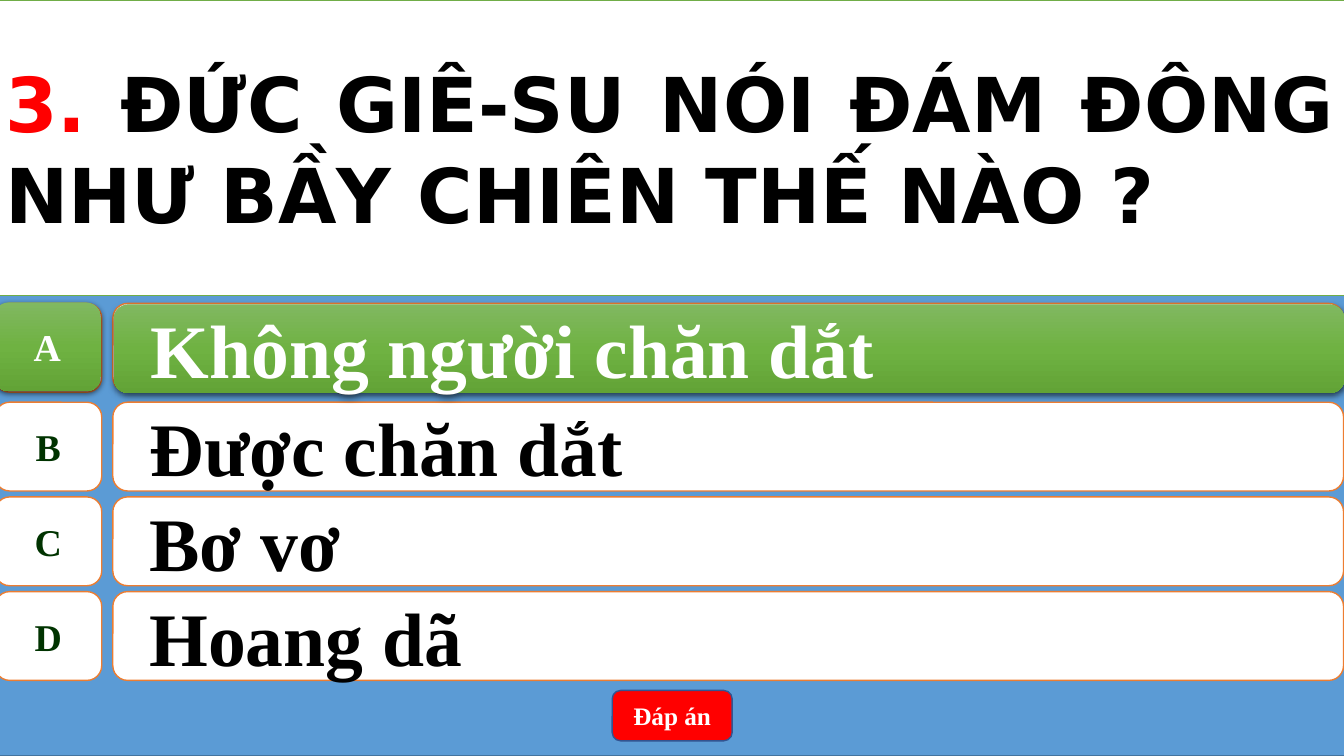
"""Build a Vietnamese quiz slide with four answers and the correct one highlighted."""
from pptx import Presentation
from pptx import util as u
from pptx.dml.color import RGBColor
from pptx.enum import shapes, text
from pptx.oxml import parse_xml
from pptx.oxml.ns import nsdecls, qn

SERIF = "Times New Roman"
ANSWERS = ["Không người chăn dắt", "Được chăn dắt", "Bơ vơ", "Hoang dã"]
ROW_TOPS = [216.7] + [287.3 + 67.65 * step for step in range(3)]
ROW_HEIGHT = 63.4
GREENS = {0: "81B861", 50: "6FB242", 100: "62A336"}
KIND = shapes.MSO_SHAPE


def paint(colour_format, value):
    """Set a colour from a hex string."""
    colour_format.rgb = RGBColor.from_string(value)


def place(shape, left, top, width, height):
    """Position a shape, in points."""
    box = {"left": left, "top": top, "width": width, "height": height}
    for side, points in box.items():
        setattr(shape, side, u.Pt(points))


def style(shape, fill, line):
    """Give a shape a flat fill and a thin outline."""
    shape.shadow.inherit = False
    shape.fill.solid()
    paint(shape.fill.fore_color, fill)
    shape.line.width = u.Pt(1)
    paint(shape.line.color, line)


def add_panel(parent, kind, box, fill, line):
    """Add a styled preset shape."""
    panel = parent.add_shape(kind, *[u.Pt(points) for points in box])
    style(panel, fill, line)
    return panel


def write(shape, runs, size, font=SERIF, align=text.PP_ALIGN.CENTER, wrap=True):
    """Write bold coloured runs in the middle of a shape."""
    frame = shape.text_frame
    frame_format = {"word_wrap": wrap, "auto_size": text.MSO_AUTO_SIZE.NONE,
                    "vertical_anchor": text.MSO_ANCHOR.MIDDLE}
    for name, value in frame_format.items():
        setattr(frame, name, value)
    paragraph = frame.paragraphs[0]
    paragraph.alignment = align
    for wording, colour in runs:
        run = paragraph.add_run()
        run.text = wording
        for name, value in {"name": font, "size": u.Pt(size), "bold": True}.items():
            setattr(run.font, name, value)
        paint(run.font.color, colour)
    return paragraph


def highlight(shape):
    """Turn a panel green with a vertical gradient and a soft shadow."""
    shape.line.fill.background()
    shape.fill.background()
    stops = "".join(f'<a:gs pos="{percent * 1000}"><a:srgbClr val="{colour}"/></a:gs>'
                    for percent, colour in GREENS.items())
    gradient = parse_xml(f'<a:gradFill {nsdecls("a")}><a:gsLst>{stops}</a:gsLst>'
                         '<a:lin ang="5400000" scaled="0"/></a:gradFill>')
    properties = shape.element.spPr
    properties.replace(properties.find(qn("a:noFill")), gradient)
    properties.find(qn("a:effectLst")).append(parse_xml(
        f'<a:outerShdw {nsdecls("a")} blurRad="{u.Pt(4.5)}" dist="{u.Pt(1.5)}" '
        'dir="5400000" algn="ctr" rotWithShape="0">'
        '<a:srgbClr val="000000"><a:alpha val="63000"/></a:srgbClr></a:outerShdw>'))


def add_answer(slide, letter, answer, top, correct=False):
    """Add one grouped row: a letter tile and its answer bar."""
    row = slide.shapes.add_group_shape().shapes
    shift = 0.7 if correct else 0
    tile = add_panel(row, KIND.FLOWCHART_ALTERNATE_PROCESS,
                     (-3.6 - shift, top - shift, 76.3, ROW_HEIGHT), "FFFFFF", "ED7D31")
    bar = add_panel(row, KIND.ROUNDED_RECTANGLE,
                    (80.6 + shift, top + shift, 879.1, ROW_HEIGHT), "FFFFFF", "ED7D31")
    write(tile, [(letter, "FFFFFF" if correct else "003300")], 27, wrap=False)
    line = write(bar, [(answer, "FFFFFF" if correct else "000000")], 54,
                 align=text.PP_ALIGN.LEFT)
    line.level = 1
    indents = line._p.get_or_add_pPr()
    indents.set("marL", str(u.Pt(36)))
    indents.set("indent", str(u.Pt(-20)))
    if correct:
        highlight(tile)
        highlight(bar)


def main():
    """Assemble and save the slide."""
    deck = Presentation()
    deck.slide_width, deck.slide_height = u.Pt(960), u.Pt(540)
    slide = deck.slides.add_slide(deck.slide_layouts[5])
    question = slide.shapes.title

    add_panel(slide.shapes, KIND.RECTANGLE, (-3.6, 0, 964, 540), "5B9BD5", "43739E")
    for letter, answer, top in zip("ABCD", ANSWERS, ROW_TOPS):
        add_answer(slide, letter, answer, top)
    button = add_panel(slide.shapes, KIND.ROUNDED_RECTANGLE,
                       (437.3, 493.2, 85.7, 36), "FF0000", "325491")
    write(button, [("Đáp án", "FFFFFF")], 18)
    add_answer(slide, "A", ANSWERS[0], ROW_TOPS[0], correct=True)

    place(question, -3.6, 0, 964, 211)
    style(question, "FFFFFF", "70AD47")
    write(question, [("3. ", "FF0000"),
                     ("ĐỨC GIÊ-SU NÓI ĐÁM ĐÔNG NHƯ BẦY CHIÊN THẾ NÀO ?", "000000")],
          54, "DejaVu Sans", text.PP_ALIGN.JUSTIFY)
    slide.shapes[-1].element.addnext(question.element)
    deck.save("out.pptx")


if __name__ == "__main__":
    main()
